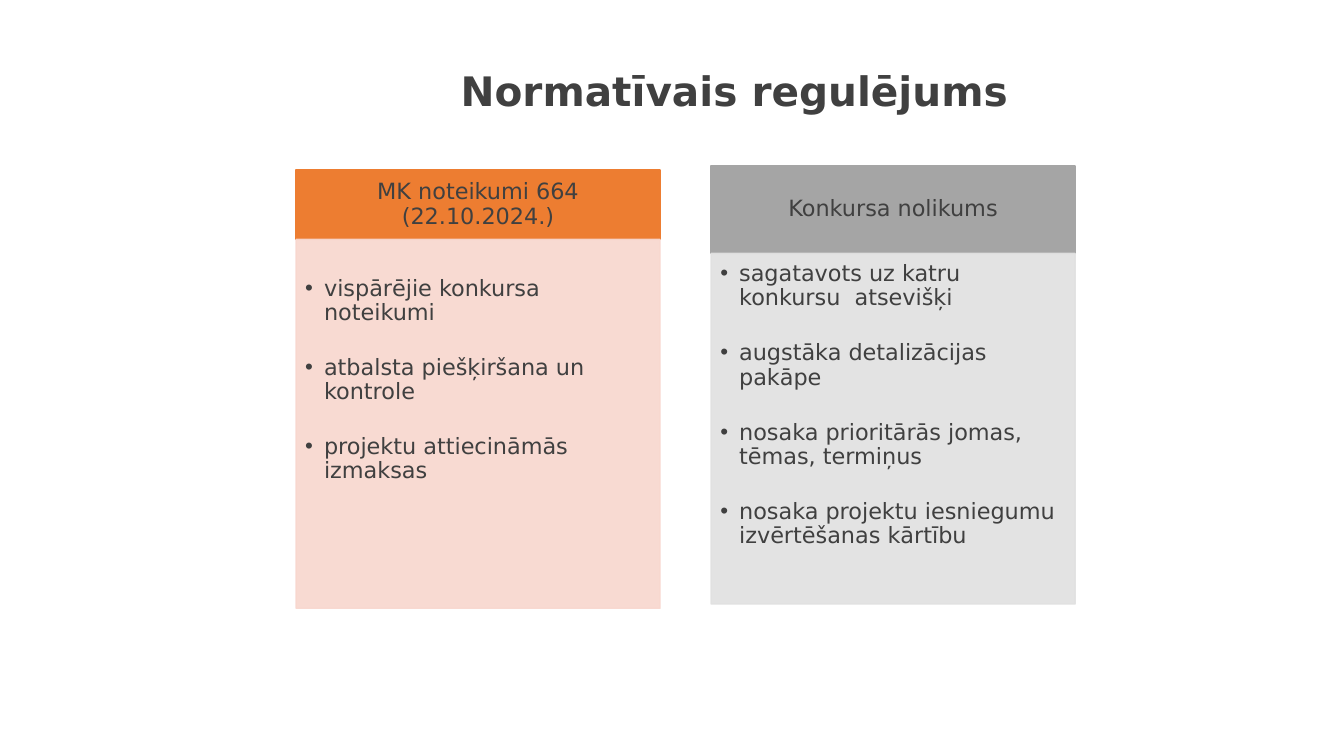
from lxml.etree import SubElement
from pptx import Presentation
from pptx.dml.color import RGBColor
from pptx.enum.text import MSO_ANCHOR as Anchor, MSO_AUTO_SIZE as AutoSize, PP_ALIGN as Align
from pptx.oxml.ns import qn
from pptx.util import Pt

TITLE = "Normatīvais regulējums"
COLUMNS = [
    {
        "heading": "MK noteikumi 664 (22.10.2024.)",
        "points": [
            "vispārējie konkursa noteikumi",
            "atbalsta piešķiršana un kontrole",
            "projektu attiecināmās izmaksas",
        ],
        "colors": ("ED7D31", "F8D7CE"),
        "left": 211.5, "top": 121.5, "heights": (49.5, 263.5), "list_inset": 27,
    },
    {
        "heading": "Konkursa nolikums",
        "points": [
            "sagatavots uz katru konkursu  atsevišķi",
            "augstāka detalizācijas pakāpe",
            "nosaka prioritārās jomas, tēmas, termiņus",
            "nosaka projektu iesniegumu izvērtēšanas kārtību",
        ],
        "colors": ("A5A5A5", "E1E1E1"),
        "left": 508, "top": 118.5, "heights": (62.5, 250.5), "list_inset": 6.5,
    },
]
COLUMN_WIDTH = 260
INDENT = 13.5
POINT_GAP = 22
LIST_OPACITY = 90
TEXT_COLOR = "404040"


def rgb(color):
    return RGBColor.from_string(color)


def place(box, left, top, width, height):
    box.left, box.top, box.width, box.height = map(Pt, (left, top, width, height))


def write(box, lines, size, bold=False, align=Align.CENTER, anchor=Anchor.MIDDLE,
          insets=(8.5, 5, 8.5, 5), indent=0, gap=0):
    """Fill the box with one paragraph per line; insets run left, top, right, bottom."""
    frame = box.text_frame
    frame.text = "\n".join(lines)
    frame.word_wrap = True
    frame.auto_size = AutoSize.NONE
    frame.vertical_anchor = anchor
    for side, inset in zip(("left", "top", "right", "bottom"), insets):
        setattr(frame, f"margin_{side}", Pt(inset))
    paragraph_format = {"alignment": align, "line_spacing": 0.9,
                        "space_before": Pt(0), "space_after": Pt(gap)}
    font_format = {"name": "DejaVu Sans", "size": Pt(size), "bold": bold}
    for para in frame.paragraphs:
        for name, value in paragraph_format.items():
            setattr(para, name, value)
        properties = para._p.get_or_add_pPr()
        properties.set("marL", str(Pt(indent)))
        properties.set("indent", str(-Pt(indent)))
        for span in para.runs:
            for name, value in font_format.items():
                setattr(span.font, name, value)
            span.font.color.rgb = rgb(TEXT_COLOR)


def paint(box, color, opacity=100):
    box.fill.solid()
    box.line.width = Pt(1)
    for fill in (box.fill, box.line.fill):
        fill.solid()
        fill.fore_color.rgb = rgb(color)
    if opacity < 100:
        for tone in box._element.spPr.iter(qn("a:srgbClr")):
            SubElement(tone, qn("a:alpha"), val=str(opacity * 1000))


deck = Presentation()
deck.slide_width, deck.slide_height = Pt(960), Pt(540)
comparison_layout = deck.slide_layouts[4]
page = deck.slides.add_slide(comparison_layout)
title, *column_boxes = page.placeholders

place(title, 169, 14.5, 711.5, 104)
write(title, [TITLE], 29, bold=True)

for column, heading, listing in zip(COLUMNS, column_boxes[::2], column_boxes[1::2]):
    heading_height, list_height = column["heights"]
    heading_color, list_color = column["colors"]
    left, top = column["left"], column["top"]

    place(heading, left, top, COLUMN_WIDTH, heading_height)
    paint(heading, heading_color)
    write(heading, [column["heading"]], 16)

    place(listing, left, top + heading_height, COLUMN_WIDTH, list_height)
    paint(listing, list_color, LIST_OPACITY)
    write(listing, column["points"], 16, align=Align.LEFT, anchor=Anchor.TOP,
          insets=(6.5, column["list_inset"], 8.5, 10), indent=INDENT, gap=POINT_GAP)

deck.save("out.pptx")
